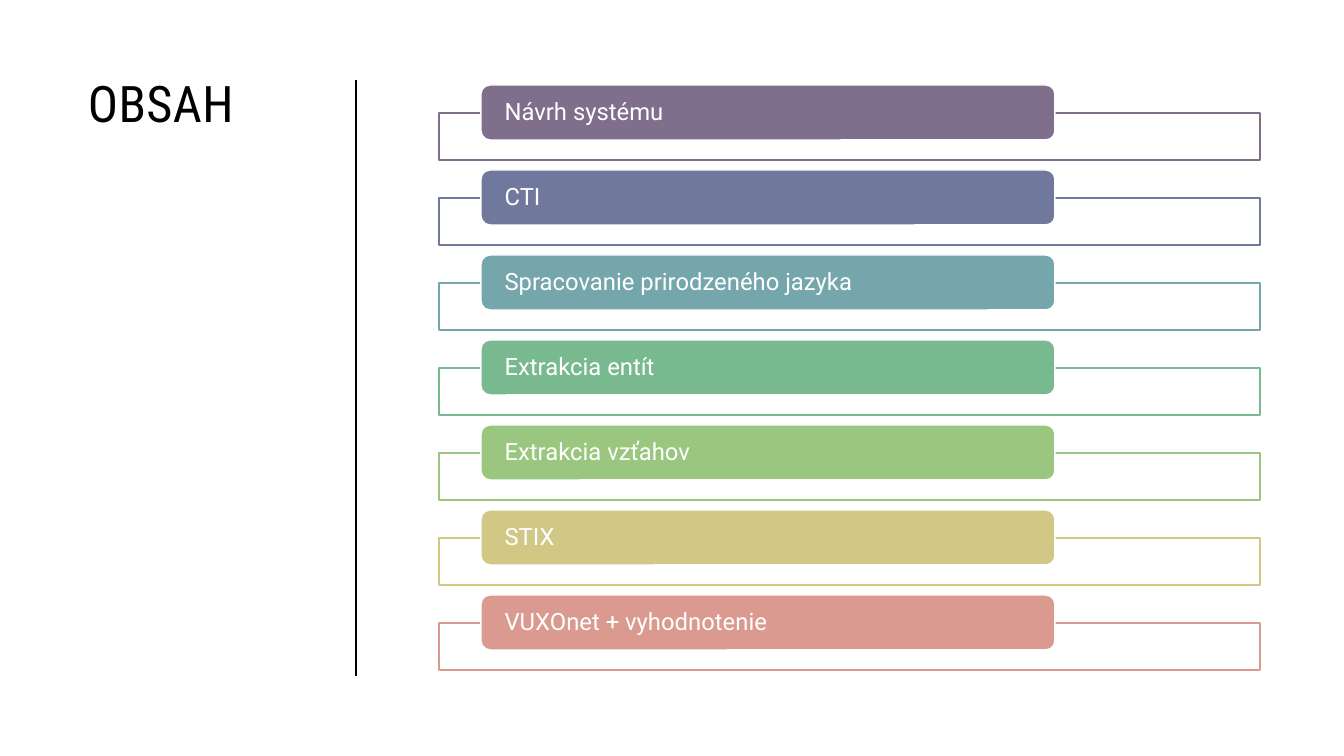
"""Build the contents slide: a title, a divider and seven coloured topic bars."""
from lxml import etree
from pptx import Presentation
from pptx import util as u
from pptx.dml.color import RGBColor
from pptx.enum import shapes, text
from pptx.oxml import ns

PX = 914400 / 100.8
TOPICS = [
    ("Návrh systému", "7F6E8C"),
    ("CTI", "70789D"),
    ("Spracovanie prirodzeného jazyka", "74A6AC"),
    ("Extrakcia entít", "79B990"),
    ("Extrakcia vzťahov", "9AC67F"),
    ("STIX", "D1C886"),
    ("VUXOnet + vyhodnotenie", "DB9A8F"),
]
TOPIC_PITCH = 85


def px(*lengths):
    return [u.Emu(round(length * PX)) for length in lengths]


def color(hex_code):
    return RGBColor.from_string(hex_code)


presentation = Presentation()
presentation.slide_width, presentation.slide_height = px(1344, 756)
slide = presentation.slides.add_slide(presentation.slide_layouts[6])

divider = slide.shapes.add_connector(
    shapes.MSO_CONNECTOR.STRAIGHT, *px(356, 676, 356, 80))
divider.line.color.rgb = color("000000")
divider.line.width = u.Pt(1)
etree.SubElement(divider._element.spPr, ns.qn("a:effectLst"))

title = slide.shapes.add_textbox(*px(78, 67, 247, 495))
title.text_frame.word_wrap = True
title.text_frame.text = "OBSAH"
title_run = title.text_frame.paragraphs[0].runs[0]
title_run.font.name = "Roboto Condensed"
title_run.font.size = u.Pt(36)
title_run.font.color.rgb = color("000000")
title_run._r.get_or_add_rPr().set("spc", "30")

for index, (topic, topic_color) in enumerate(TOPICS):
    top = 85 + index * TOPIC_PITCH
    frame = slide.shapes.add_shape(
        shapes.MSO_SHAPE.RECTANGLE, *px(439, top + 28, 821, 47))
    bar = slide.shapes.add_shape(
        shapes.MSO_SHAPE.ROUNDED_RECTANGLE, *px(481, top, 574, 55))
    for shape, fill, line in ((frame, "FFFFFF", topic_color),
                              (bar, topic_color, "FFFFFF")):
        shape.shadow.inherit = False
        shape.fill.solid()
        shape.fill.fore_color.rgb = color(fill)
        shape.line.color.rgb = color(line)
        shape.line.width = u.Pt(1)

    text_frame = bar.text_frame
    text_frame.word_wrap = True
    text_frame.vertical_anchor = text.MSO_ANCHOR.MIDDLE
    text_frame.margin_left, text_frame.margin_right = px(21, 21)
    text_frame.margin_top = text_frame.margin_bottom = 0
    text_frame.text = topic
    paragraph = text_frame.paragraphs[0]
    paragraph.alignment = text.PP_ALIGN.LEFT
    paragraph.line_spacing = 0.9
    font = paragraph.runs[0].font
    font.name = "Roboto"
    font.size = u.Pt(17)
    font.color.rgb = color("FFFFFF")

presentation.save("out.pptx")
